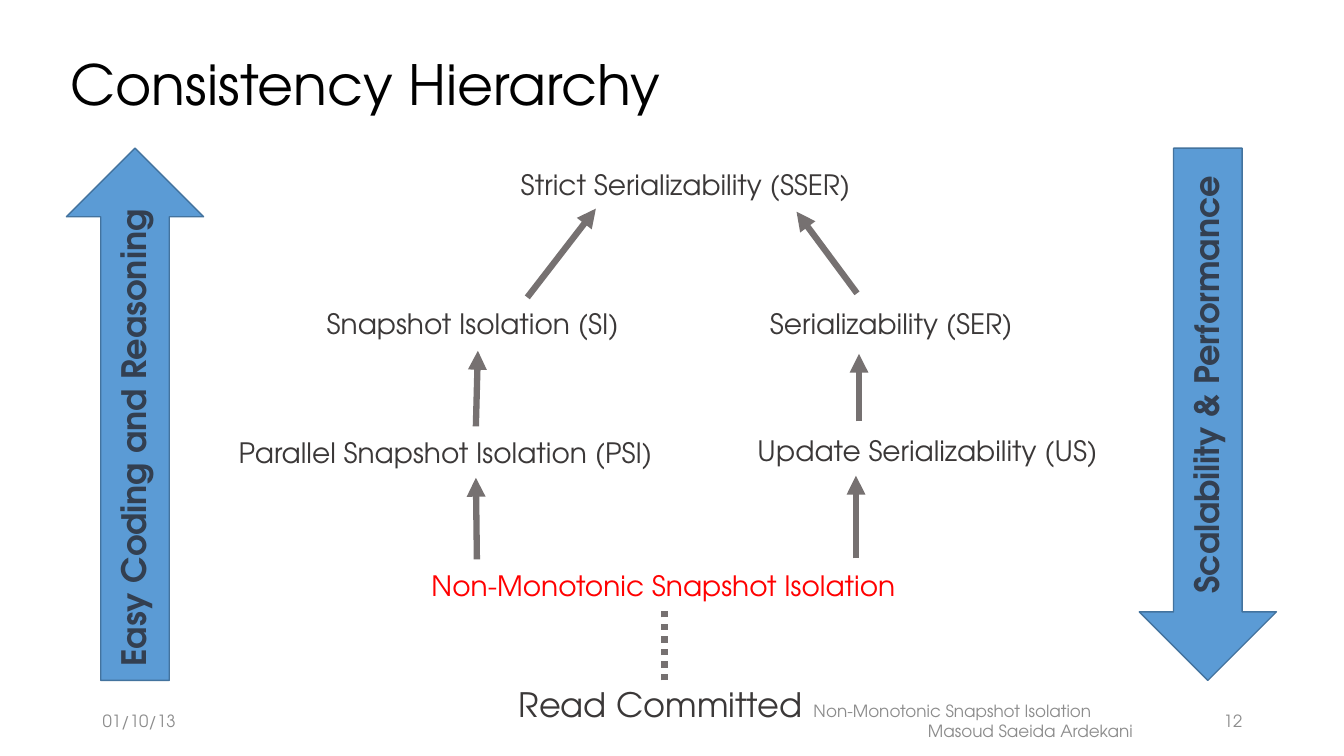
from lxml import etree
from pptx import Presentation
from pptx import util as u
from pptx.dml import color
from pptx.enum import dml, shapes, text
from pptx.oxml import ns

FONT = "TeX Gyre Adventor"
COLORS = {
    "title": "000000", "level": "3B3838", "highlight": "FF0000",
    "link": "767171", "trend": "5B9BD5", "trend_edge": "43739E",
    "trend_text": "333F50", "footer": "8C8C8C",
}
LEFT, CENTER, RIGHT = text.PP_ALIGN.LEFT, text.PP_ALIGN.CENTER, text.PP_ALIGN.RIGHT
TOP, MIDDLE = text.MSO_ANCHOR.TOP, text.MSO_ANCHOR.MIDDLE


def rgb(name):
    return color.RGBColor.from_string(COLORS[name])


def add_text(slide, box, lines, size, ink, anchor=TOP, bold=False, wrap=True, spacing=None):
    label = slide.shapes.add_textbox(*map(u.Inches, box))
    frame = label.text_frame
    frame.word_wrap = wrap
    frame.vertical_anchor = anchor
    for index, (words, align) in enumerate(lines):
        paragraph = frame.add_paragraph() if index else frame.paragraphs[0]
        paragraph.alignment = align
        paragraph.line_spacing = spacing
        run = paragraph.add_run()
        run.text = words
        run.font.name = FONT
        run.font.size = u.Pt(size)
        run.font.bold = bold
        run.font.color.rgb = rgb(ink)
    return label


def add_link(slide, start, end, dotted=False):
    link = slide.shapes.add_connector(
        shapes.MSO_CONNECTOR.STRAIGHT, *map(u.Inches, (*start, *end)))
    link.line.color.rgb = rgb("link")
    link.line.width = u.Pt(4.5)
    if dotted:
        link.line.dash_style = dml.MSO_LINE.ROUND_DOT
    else:
        etree.SubElement(link.line._get_or_add_ln(), ns.qn("a:tailEnd"), type="triangle")
    etree.SubElement(link._element.spPr, ns.qn("a:effectLst"))


def add_trend(slide, box, direction, words, length, middle):
    left, top, width, height = box
    arrow = slide.shapes.add_shape(direction, *map(u.Inches, box))
    arrow.shadow.inherit = False
    arrow.fill.solid()
    arrow.fill.fore_color.rgb = rgb("trend")
    arrow.line.color.rgb = rgb("trend_edge")
    arrow.line.width = u.Pt(1)
    label_box = (left + width / 2 - 0.02 - length / 2, top + middle - 0.25, length, 0.5)
    label = add_text(slide, label_box, [(words, LEFT)], 24, "trend_text", bold=True, wrap=False)
    label.rotation = 270


def add_hierarchy(slide, box):
    left, top, width, height = box
    levels = [
        ("Strict Serializability (SSER)", 5.09, 0, 4.43, 20, "level"),
        ("Snapshot Isolation (SI)", 2.98, 1.38, 3.72, 20, "level"),
        ("Serializability (SER)", 7.13, 1.38, 3.35, 20, "level"),
        ("Parallel Snapshot Isolation (PSI)", 2.71, 2.66, 5.42, 20, "level"),
        ("Update Serializability (US)", 7.49, 2.64, 4.43, 20, "level"),
        ("Non-Monotonic Snapshot Isolation", 4.87, 3.98, 6.18, 20, "highlight"),
        ("Read Committed", 4.84, 5.13, 4.61, 24, "level"),
    ]
    links = [
        ((3.52, 1.34), (4.2, 0.46)),
        ((6.79, 1.3), (6.19, 0.49)),
        ((3.01, 2.62), (3.03, 1.87)),
        ((6.81, 2.57), (6.81, 1.9)),
        ((3.02, 3.94), (3.01, 3.13)),
        ((6.78, 3.93), (6.78, 3.11)),
        ((4.88, 5.14), (4.88, 4.42)),
    ]
    for words, middle, drop, span, size, ink in levels:
        label_box = (left + middle - span / 2, top + drop, span, size / 50 + 0.04)
        add_text(slide, label_box, [(words, CENTER)], size, ink)
    for start, end in links:
        add_link(slide, (left + start[0], top + start[1]), (left + end[0], top + end[1]),
                 dotted=(start, end) == links[-1])


def add_footer(slide, box):
    left, top, width, height = box
    credit = [("Non-Monotonic Snapshot Isolation", LEFT), ("Masoud Saeida Ardekani", CENTER)]
    parts = [
        (left, 3, [("01/10/13", LEFT)]),
        (left + 7.05, 4.5, credit),
        (left + width - 3, 3, [("12", RIGHT)]),
    ]
    for start, span, lines in parts:
        add_text(slide, (start, top, span, height), lines, 12, "footer", MIDDLE)


def add_hierarchy_slide(deck):
    slide = deck.slides.add_slide(deck.slide_layouts[6])
    add_text(slide, (0.6, 0.52, 11.5, 0.7), [("Consistency Hierarchy", LEFT)],
             39.6, "title", MIDDLE, spacing=0.9)
    add_trend(slide, (0.66, 1.47, 1.36, 5.28), shapes.MSO_SHAPE.UP_ARROW,
              "Easy Coding and Reasoning", 4.78, 2.85)
    add_trend(slide, (11.3, 1.47, 1.36, 5.28), shapes.MSO_SHAPE.DOWN_ARROW,
              "Scalability & Performance", 4.4, 2.32)
    add_hierarchy(slide, (1.71, 1.61, 9.7, 5.63))
    add_footer(slide, (0.92, 6.95, 11.5, 0.4))


def main():
    deck = Presentation()
    deck.slide_width = u.Inches(13.33)
    deck.slide_height = u.Inches(7.5)
    add_hierarchy_slide(deck)
    deck.save("out.pptx")


if __name__ == "__main__":
    main()
